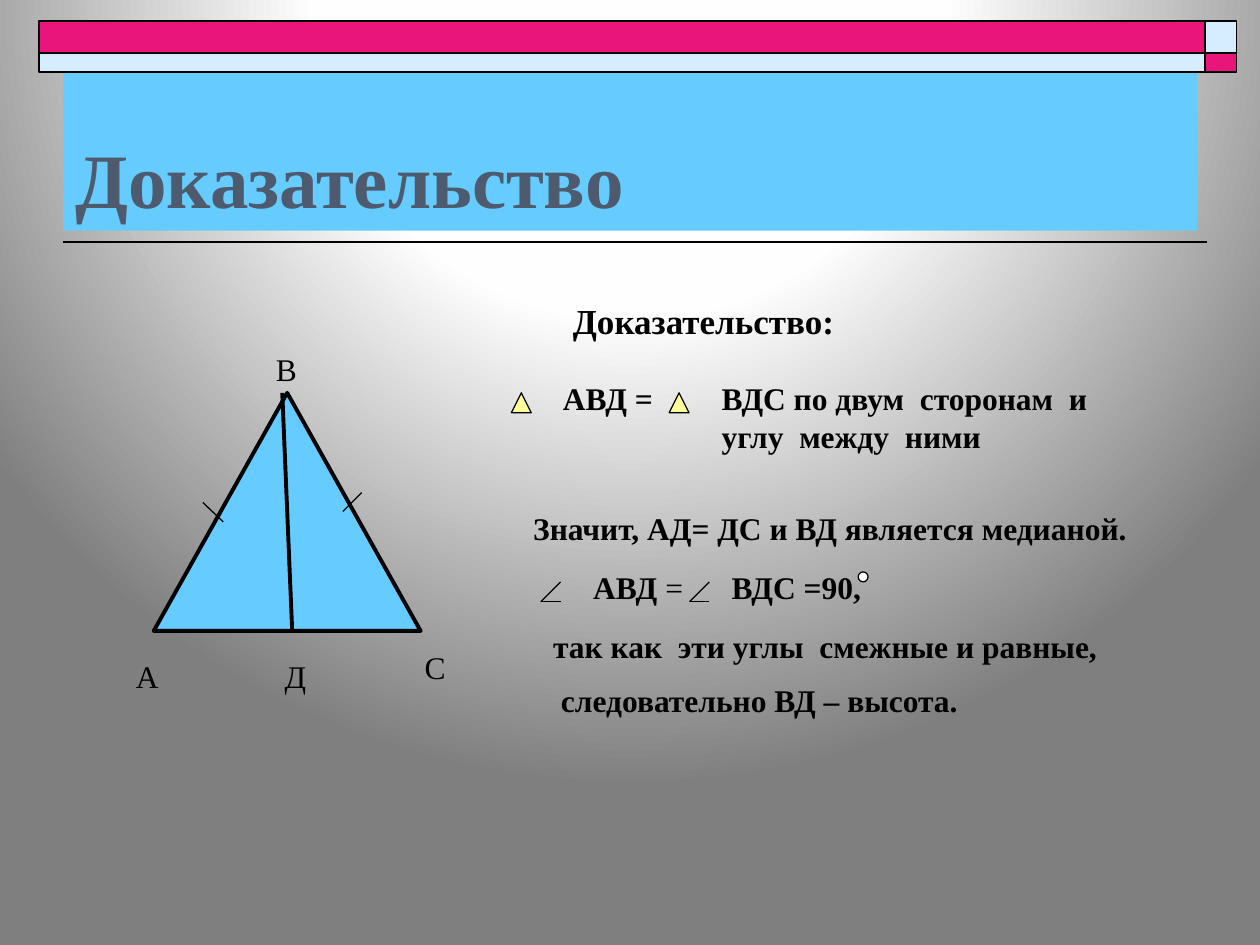
from lxml.etree import SubElement
from pptx import Presentation
from pptx.dml.color import RGBColor
from pptx.enum.shapes import MSO_CONNECTOR, MSO_SHAPE
from pptx.enum.text import MSO_ANCHOR, MSO_AUTO_SIZE, PP_ALIGN
from pptx.oxml.ns import qn
from pptx.util import Cm, Pt

FONT = "Times New Roman"
COLORS = {
    "black": "000000", "white": "FFFFFF", "near_white": "FEFEFE", "grey": "7F7F7F",
    "pink": "EA157A", "pale": "D6ECFF", "sky": "66CCFF", "slate": "4E5B6F",
    "yellow": "FFFF99",
}
BACKGROUND_STOPS = [(0, "white"), (40, "near_white"), (100, "grey")]
BACKGROUND_FOCUS = {"l": 50, "t": -80, "r": 50, "b": 180}

TITLE = "Доказательство"
TITLE_AREA = (1.27, 1.47, 22.86, 3.18)
BAR_COLUMNS = [(0.79, 23.5), (24.29, 0.64)]
BAR_ROWS = [(0.43, 0.64), (1.07, 0.38)]
BAR_COLORS = [["pink", "pale"], ["pale", "pink"]]
TITLE_RULE = (24.33, 4.88, 1.27, 4.88)

TRIANGLE = (3.1, 7.92, 5.38, 4.8)
MEDIAN = (5.69, 7.92, 5.89, 12.72)
SIDE_TICKS = [(4.09, 10.13, 4.5, 10.52), (6.91, 10.31, 7.29, 9.93)]
VERTEX_LABELS = [
    ("А", (2.49, 13.13, 1, 1.02)),
    ("В", (5.31, 6.93, 1.4, 1.02)),
    ("С", (8.31, 12.93, 1.4, 1.02)),
    ("Д", (5.49, 13.13, 1, 1.02)),
]

HEADING = ("Доказательство:", (11.3, 5.92, 10, 1.09))
PROOF = [
    ([["АВД ="]], (11.1, 7.52, 3, 1.02)),
    ([["ВДС по двум  сторонам  и углу  между  ними"]], (14.3, 7.52, 9.2, 1.78)),
    ([["Значит, АД= ДС и ВД является медианой."]], (10.5, 10.13, 12.8, 1.02)),
    ([["АВД ", ("=", False)]], (11.71, 11.33, 5.41, 1.02)),
    ([["ВДС =90,"]], (14.5, 11.33, 7.21, 1.02)),
    ([["так как  эти углы  смежные и равные,"], [" следовательно ВД – высота."]],
     (10.9, 12.52, 12.4, 2.16)),
]
TRIANGLE_SIGNS = [(10.31, 7.92), (13.49, 7.92)]
ANGLE_SIGNS = [(10.9, 11.73), (13.9, 11.73)]
SIGN_SIZE = 0.4
DEGREE = (17.3, 11.53, 0.2, 0.2)


def color(name):
    return RGBColor.from_string(COLORS[name])


def paint_background(page):
    page.background.fill.gradient()
    gradient = page.element.find(".//" + qn("a:gradFill"))
    for child in list(gradient):
        gradient.remove(child)
    stops = SubElement(gradient, qn("a:gsLst"))
    for position, name in BACKGROUND_STOPS:
        stop = SubElement(stops, qn("a:gs"), pos=str(position * 1000))
        SubElement(stop, qn("a:srgbClr"), val=COLORS[name])
    circle = SubElement(gradient, qn("a:path"), path="circle")
    focus = {side: str(value * 1000) for side, value in BACKGROUND_FOCUS.items()}
    SubElement(circle, qn("a:fillToRect"), focus)


def write(frame, paragraphs, size=18, bold=False, ink="black"):
    for index, runs in enumerate(paragraphs):
        para = frame.paragraphs[0] if index == 0 else frame.add_paragraph()
        para.alignment = PP_ALIGN.LEFT
        if index:
            para.space_before = Pt(size / 2)
        for run in runs:
            text, weight = run if isinstance(run, tuple) else (run, bold)
            span = para.add_run()
            span.text = text
            span.font.name = FONT
            span.font.size = Pt(size)
            span.font.bold = weight
            span.font.color.rgb = color(ink)


def add_text(page, paragraphs, area, **style):
    box = page.shapes.add_textbox(*map(Cm, area))
    box.text_frame.word_wrap = True
    box.text_frame.auto_size = MSO_AUTO_SIZE.SHAPE_TO_FIT_TEXT
    write(box.text_frame, paragraphs, **style)


def add_figure(page, kind, area, fill, width=0.75):
    figure = page.shapes.add_shape(kind, *map(Cm, area))
    figure.shadow.inherit = False
    figure.fill.solid()
    figure.fill.fore_color.rgb = color(fill)
    figure.line.color.rgb = color("black")
    figure.line.width = Pt(width)


def add_line(page, ends, width=0.75):
    line = page.shapes.add_connector(MSO_CONNECTOR.STRAIGHT, *map(Cm, ends))
    line.line.color.rgb = color("black")
    line.line.width = Pt(width)
    SubElement(line.element.spPr, qn("a:effectLst"))


def add_header(page):
    add_line(page, TITLE_RULE, width=1)
    for (top, height), names in zip(BAR_ROWS, BAR_COLORS):
        for (left, width), name in zip(BAR_COLUMNS, names):
            add_figure(page, MSO_SHAPE.RECTANGLE, (left, top, width, height), name, width=1)
    title = page.shapes.title
    title.left, title.top, title.width, title.height = map(Cm, TITLE_AREA)
    title.fill.solid()
    title.fill.fore_color.rgb = color("sky")
    title.text_frame.vertical_anchor = MSO_ANCHOR.BOTTOM
    title.text_frame.auto_size = MSO_AUTO_SIZE.NONE
    write(title.text_frame, [[TITLE]], size=44, bold=True, ink="slate")


def add_drawing(page):
    add_figure(page, MSO_SHAPE.ISOSCELES_TRIANGLE, TRIANGLE, "sky", width=2.25)
    add_line(page, MEDIAN, width=2.25)
    for tick in SIDE_TICKS:
        add_line(page, tick)
    for label, area in VERTEX_LABELS:
        add_text(page, [[label]], area)


def add_proof(page):
    heading, area = HEADING
    add_text(page, [[heading]], area, size=20, bold=True)
    for paragraphs, area in PROOF:
        add_text(page, paragraphs, area, bold=True)
    for left, top in TRIANGLE_SIGNS:
        add_figure(page, MSO_SHAPE.ISOSCELES_TRIANGLE,
                   (left, top, SIGN_SIZE, SIGN_SIZE), "yellow")
    for left, top in ANGLE_SIGNS:
        right, bottom = left + SIGN_SIZE, top + SIGN_SIZE
        add_line(page, (right, top, left, bottom))
        add_line(page, (left, bottom, right, bottom))
    add_figure(page, MSO_SHAPE.OVAL, DEGREE, "white")


def main():
    deck = Presentation()
    deck.slide_width, deck.slide_height = Cm(25.4), Cm(19.05)
    page = deck.slides.add_slide(deck.slide_layouts[5])
    paint_background(page)
    add_header(page)
    add_drawing(page)
    add_proof(page)
    deck.save("out.pptx")


if __name__ == "__main__":
    main()
